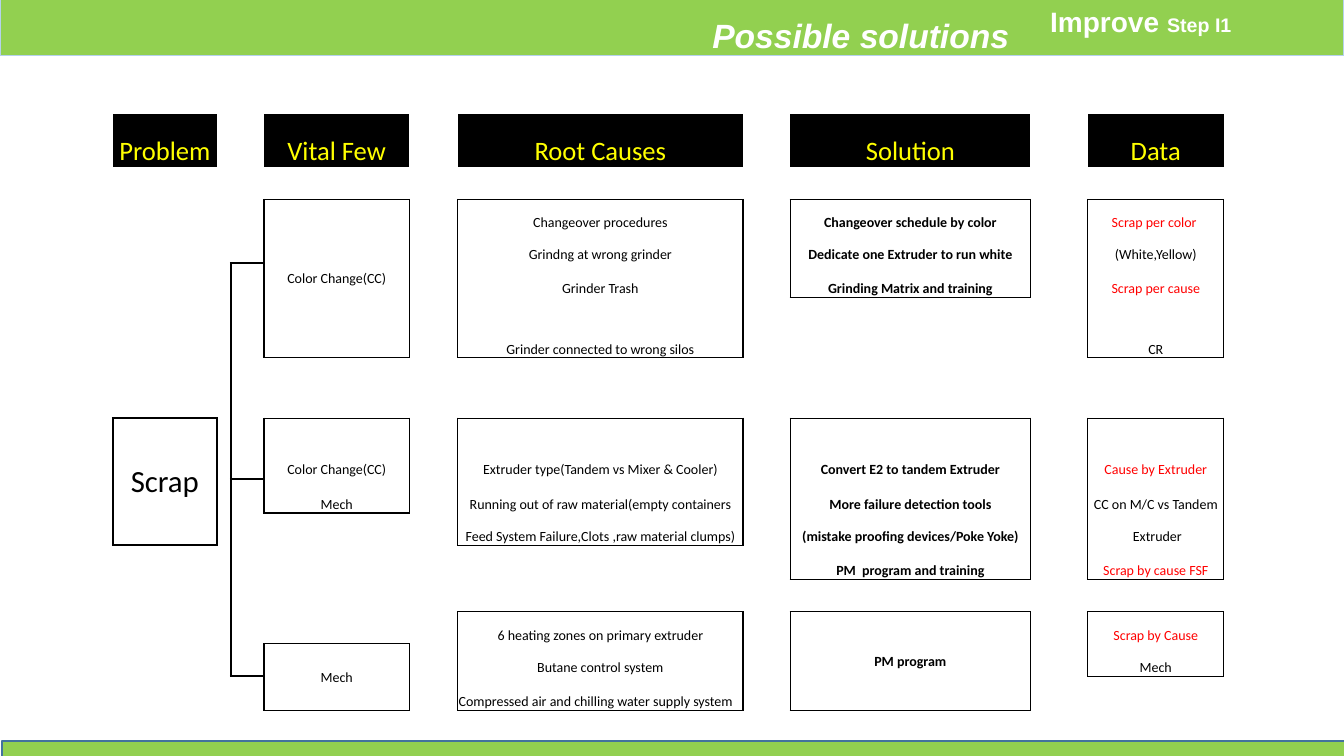
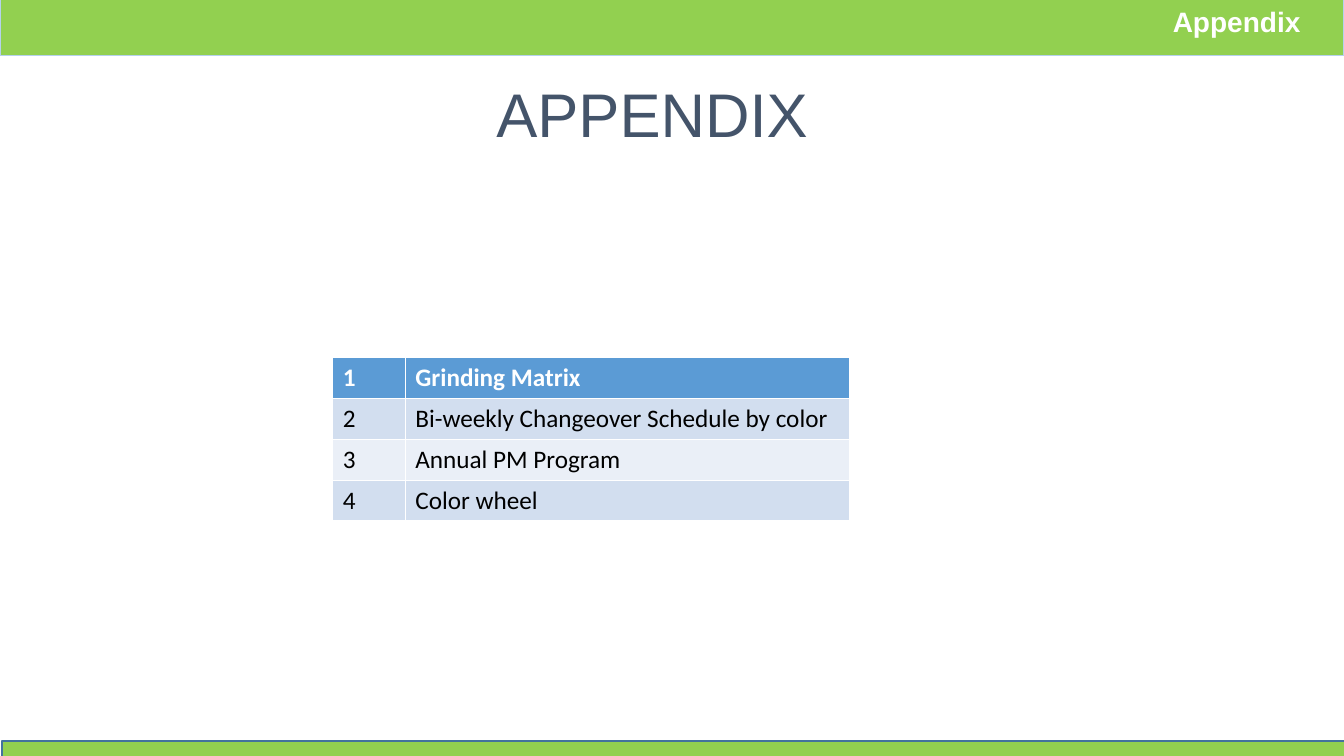
from lxml import etree
from pptx import Presentation
from pptx import util as u
from pptx.dml.color import RGBColor
from pptx.enum import shapes, text
from pptx.oxml.ns import qn

GREEN = RGBColor(0x92, 0xD0, 0x50)
PALE_BLUE = RGBColor(0xB5, 0xD2, 0xEC)
DEEP_BLUE = RGBColor(0x43, 0x73, 0x9E)
SLATE = RGBColor(0x44, 0x54, 0x6A)
WHITE = RGBColor(0xFF, 0xFF, 0xFF)
BLACK = RGBColor(0, 0, 0)
YELLOW = RGBColor(0xFF, 0xFF, 0)
RED = RGBColor(0xFF, 0, 0)
HEADER_BLUE = RGBColor(0x5B, 0x9B, 0xD5)
ROW_FILLS = [RGBColor(0xD2, 0xDE, 0xEF), RGBColor(0xEA, 0xEF, 0xF7)]
CENTER, RIGHT, LEFT = text.PP_ALIGN.CENTER, text.PP_ALIGN.RIGHT, text.PP_ALIGN.LEFT
MIDDLE, BOTTOM, TOP = text.MSO_ANCHOR.MIDDLE, text.MSO_ANCHOR.BOTTOM, text.MSO_ANCHOR.TOP

deck = Presentation()
deck.slide_width, deck.slide_height = u.Inches(13.33), u.Inches(7.5)
layout = deck.slide_layouts[5]


def share(left, top, width, height):
    """Turn percentages of the slide's size into lengths."""
    across, down = deck.slide_width / 100, deck.slide_height / 100
    return int(left * across), int(top * down), int(width * across), int(height * down)


def add_span(para, content, size, color, font="Calibri", bold=False, italic=False):
    span = para.add_run()
    span.text = content
    span.font.size = u.Pt(size)
    span.font.name = font
    span.font.bold, span.font.italic = bold, italic
    span.font.color.rgb = color
    return span


solutions = deck.slides.add_slide(layout)
appendix = deck.slides.add_slide(layout)

# Bands shared through the layout
bands = [(share(0, -0.93, 100, 8.27), PALE_BLUE), (share(0.15, 98, 99.92, 2.93), DEEP_BLUE)]
for position, (area, edge_color) in enumerate(bands):
    band = solutions.shapes.add_shape(shapes.MSO_SHAPE.RECTANGLE, *area)
    band.shadow.inherit = False
    band.fill.solid()
    band.fill.fore_color.rgb = GREEN
    band.line.color.rgb = edge_color
    band.line.width = u.Pt(1)
    layout.shapes._spTree.insert(2 + position, band._element)

# Titles
titles = [
    (solutions, "Possible solutions", share(52.06, 1.33, 23.78, 6.67), RIGHT, False, 24, WHITE, True),
    (appendix, "APPENDIX", share(33.16, 10.27, 30.76, 9.33), CENTER, True, 44, SLATE, False),
]
for page, content, area, align, wrap, size, color, strong in titles:
    title = page.shapes.title
    title.left, title.top, title.width, title.height = area
    title.text_frame.word_wrap = wrap
    title.text_frame.vertical_anchor = MIDDLE
    para = title.text_frame.paragraphs[0]
    para.alignment = align
    add_span(para, content, size, color, "Arial", strong, strong)

# Step labels in the top band
labels = [
    (solutions, share(75.77, 0, 18.23, 9.6), [("Improve ", 20), ("Step I1", 14)], True),
    (appendix, share(86.5, 0, 11.03, 5.73), [("Appendix", 20)], False),
]
for page, area, parts, shadowed in labels:
    box = page.shapes.add_textbox(*area)
    box.text_frame.word_wrap = shadowed
    para = box.text_frame.paragraphs[0]
    para.alignment = CENTER
    for content, size in parts:
        span = add_span(para, content, size, WHITE, "Arial", True)
        if shadowed:
            effects = etree.Element(qn("a:effectLst"))
            shadow = etree.SubElement(effects, qn("a:outerShdw"), dist="25400", dir="2700000")
            etree.SubElement(shadow, qn("a:srgbClr"), val=str(BLACK))
            span.font._element.find(qn("a:solidFill")).addnext(effects)

# Solution tree: a table whose boxes and bracket are cell borders
PROBLEM, BRACKET, VITAL, CAUSE, SOLUTION, DATA = 0, 2, 3, 5, 7, 9
columns = [1.03, 0.14, 0.33, 1.44, 0.48, 2.83, 0.47, 2.38, 0.57, 0.59, 0.76]
rows = [0.53, 0.32, 0.31, 0.32, 0.34, 0.6, 0.6, 0.6,
        0.34, 0.32, 0.34, 0.32, 0.32, 0.32, 0.34]
headers = {PROBLEM: "Problem", VITAL: "Vital Few", CAUSE: "Root Causes",
           SOLUTION: "Solution", DATA: "Data"}
# First row, column, number of rows, lines; a single line fills its whole box
boxes = [
    (7, PROBLEM, 3, ["Scrap"]),
    (2, VITAL, 4, ["Color Change(CC)"]),
    (7, VITAL, 2, ["Color Change(CC)", "Mech"]),
    (13, VITAL, 2, ["Mech"]),
    (2, CAUSE, 4, ["Changeover procedures", "Grindng at wrong grinder",
                   "Grinder Trash", "Grinder connected to wrong silos"]),
    (7, CAUSE, 3, ["Extruder type(Tandem vs Mixer & Cooler)",
                   "Running out of raw material(empty containers",
                   "Feed System Failure,Clots ,raw material clumps)"]),
    (12, CAUSE, 3, ["6 heating zones on primary extruder", "Butane control system",
                    "Compressed air and chilling water supply system"]),
    (2, SOLUTION, 3, ["Changeover schedule by color", "Dedicate one Extruder to run white",
                      "Grinding Matrix and training"]),
    (7, SOLUTION, 4, ["Convert E2 to tandem Extruder", "More failure detection tools",
                      "(mistake proofing devices/Poke Yoke)", "PM  program and training"]),
    (12, SOLUTION, 3, ["PM program"]),
    (2, DATA, 4, ["Scrap per color ", "(White,Yellow)", "Scrap per cause", "CR"]),
    (7, DATA, 4, ["Cause by Extruder", "CC on M/C vs Tandem", " Extruder",
                  "Scrap by cause FSF"]),
    (12, DATA, 2, ["Scrap by Cause", "Mech"]),
]

left, top, _, _ = share(8.4, 15.07, 0, 0)
tree = solutions.shapes.add_table(len(rows), len(columns), left, top,
                                  u.Inches(sum(columns)), u.Inches(sum(rows))).table
tree.first_row = tree.horz_banding = False
for column, width in zip(tree.columns, columns):
    column.width = u.Inches(width)
for row, height in zip(tree.rows, rows):
    row.height = u.Inches(height)
for row in [0, *range(2, 6), *range(7, 11), 12, 13]:
    tree.cell(row, DATA).merge(tree.cell(row, DATA + 1))

# Line widths by grid line: (line, column) across and (row, line) down
across = {(line, BRACKET): 1.5 for line in (4, 8, 14)}
down = {(row, BRACKET): 1.5 for row in range(4, 14)}
for first, column, count, lines in boxes:
    width = 1.5 if column == PROBLEM else 1
    end = column + (2 if column == DATA else 1)
    for row in range(first, first + count):
        down[row, column] = down[row, end] = width
    for covered in range(column, end):
        across[first, covered] = across[first + count, covered] = width
    if len(lines) == 1:
        tree.cell(first, column).merge(tree.cell(first + count - 1, column))
    for row, content in enumerate(lines, first):
        cell = tree.cell(row, column)
        cell.vertical_anchor = MIDDLE if len(lines) == 1 else BOTTOM
        para = cell.text_frame.paragraphs[0]
        para.alignment = LEFT if content.startswith("Compressed") else CENTER
        add_span(para, content, 22 if column == PROBLEM else 10,
                 RED if content.startswith(("Scrap ", "Cause ")) else BLACK,
                 bold=column == SOLUTION)

for column, content in headers.items():
    cell = tree.cell(0, column)
    cell.vertical_anchor = BOTTOM
    para = cell.text_frame.paragraphs[0]
    para.alignment = CENTER
    add_span(para, content, 19, YELLOW)

for row in range(len(rows)):
    for column in range(len(columns)):
        cell = tree.cell(row, column)
        cell.margin_left = cell.margin_right = cell.margin_top = u.Inches(0.01)
        cell.margin_bottom = 0
        if not cell.text:
            cell.text_frame.paragraphs[0]._p.get_or_add_endParaRPr().set("sz", "1000")
        sides = {
            "L": down.get((row, column)),
            "R": down.get((row, column + cell.span_width)),
            "T": across.get((row, column)),
            "B": across.get((row + cell.span_height, column)),
        }
        properties = cell._tc.get_or_add_tcPr()
        for side, width in sides.items():
            line = etree.SubElement(properties, qn("a:ln" + side), w=str(u.Pt(width or 0)))
            if width:
                paint = etree.SubElement(line, qn("a:solidFill"))
                etree.SubElement(paint, qn("a:srgbClr"), val=str(BLACK))
            else:
                etree.SubElement(line, qn("a:noFill"))
        if row == 0 and column in headers:
            cell.fill.solid()
            cell.fill.fore_color.rgb = BLACK
        else:
            cell.fill.background()

# Appendix contents
entries = ["Grinding Matrix", "Bi-weekly Changeover Schedule by color",
           "Annual PM Program", "Color wheel"]
left, top, width, height = share(24.76, 47.33, 38.48, 21.6)
contents = appendix.shapes.add_table(len(entries), 2, left, top, width, height).table
contents.columns[0].width = u.Inches(0.72)
contents.columns[1].width = u.Inches(4.41)
for row, entry in enumerate(entries):
    is_header = row == 0
    for column, content in enumerate([str(row + 1), entry]):
        cell = contents.cell(row, column)
        cell.vertical_anchor = TOP
        cell.fill.solid()
        cell.fill.fore_color.rgb = HEADER_BLUE if is_header else ROW_FILLS[(row - 1) % 2]
        add_span(cell.text_frame.paragraphs[0], content, 18,
                 WHITE if is_header else BLACK, bold=is_header)

deck.save("out.pptx")
